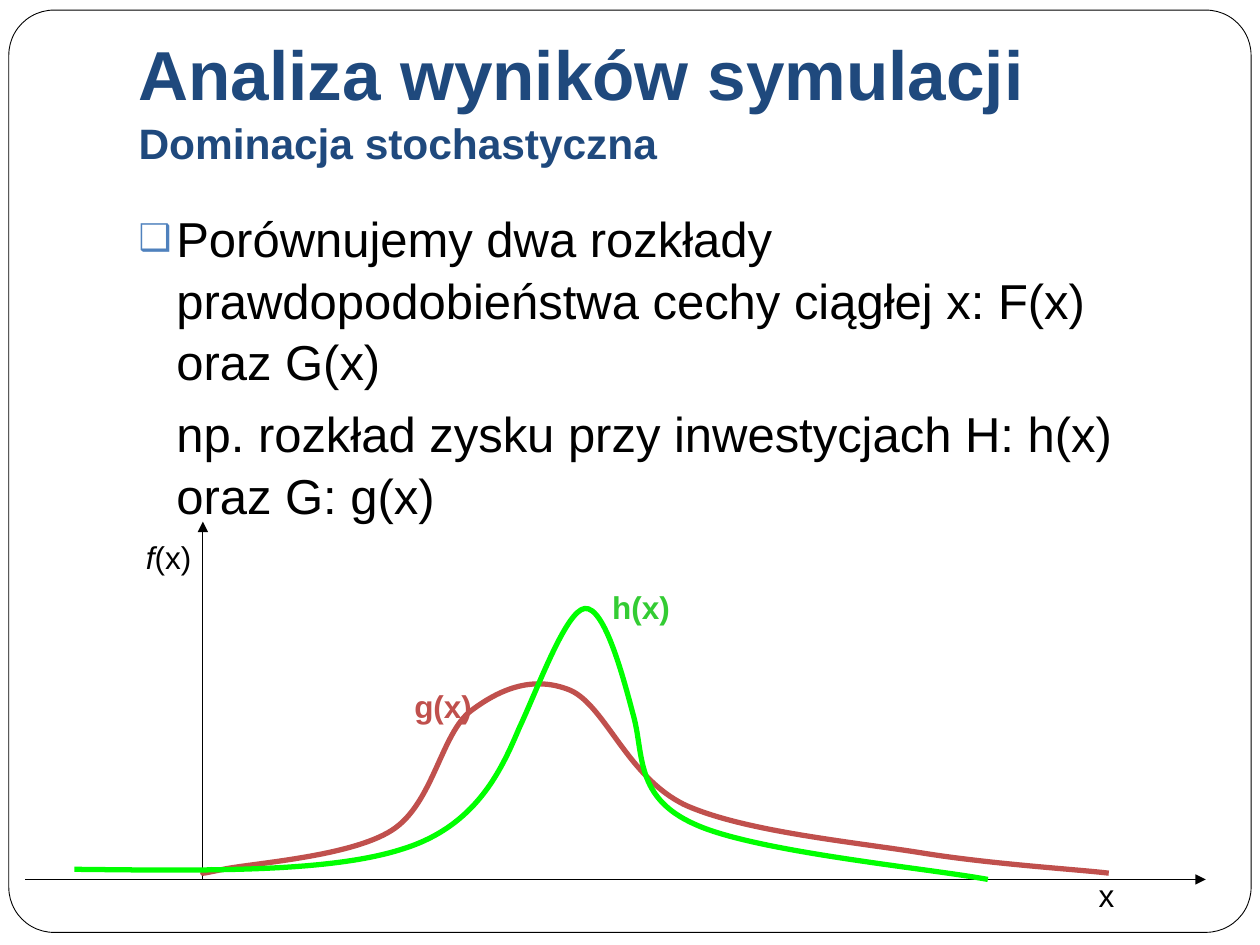
"""Build a slide comparing two probability densities, h(x) and g(x)."""
import pptx
import pptx.dml.color
import pptx.enum.shapes
import pptx.enum.text
import pptx.oxml
import pptx.oxml.ns
import pptx.util

Inches = pptx.util.Inches
Pt = pptx.util.Pt
RGBColor = pptx.dml.color.RGBColor
qn = pptx.oxml.ns.qn

WHITE = RGBColor(0xFF, 0xFF, 0xFF)
BLACK = RGBColor(0x00, 0x00, 0x00)
NAVY = RGBColor(0x1F, 0x49, 0x7D)
BLUE = RGBColor(0x4F, 0x81, 0xBD)
RED = RGBColor(0xC0, 0x50, 0x4D)
LIME = RGBColor(0x00, 0xFF, 0x00)
GREEN = RGBColor(0x33, 0xCC, 0x33)

G_CURVE = [
    (1.69, 6.9), (1.61, 6.93), (1.53, 6.95), (1.77, 6.9),
    (2.01, 6.85), (2.78, 6.8), (3.11, 6.59),
    (3.44, 6.38), (3.5, 5.82), (3.74, 5.64),
    (3.98, 5.46), (4.24, 5.36), (4.53, 5.48),
    (4.81, 5.61), (4.98, 6.17), (5.44, 6.39),
    (5.91, 6.6), (6.76, 6.68), (7.32, 6.77),
    (7.88, 6.86), (8.55, 6.9), (8.8, 6.93),
]
H_CURVE = [
    (0.59, 6.9), (1.58, 6.91), (2.6, 6.93), (3.19, 6.74),
    (3.78, 6.56), (3.98, 6.11), (4.12, 5.78),
    (4.27, 5.46), (4.49, 4.85), (4.64, 4.83),
    (4.8, 4.81), (4.95, 5.39), (5.03, 5.69),
    (5.11, 5.99), (5.04, 6.33), (5.51, 6.54),
    (5.98, 6.76), (7.35, 6.89), (7.84, 6.98),
]


class SlideBuilder:
    def __init__(self, slide, font="Arial"):
        self.slide = slide
        self.font = font

    def style(self, font, size, color, bold=False):
        font.name = self.font
        font.size = Pt(size)
        font.bold = bold
        font.color.rgb = color

    def place(self, shape, left, top, width, height):
        shape.left, shape.top = Inches(left), Inches(top)
        shape.width, shape.height = Inches(width), Inches(height)

    def frame(self, left, top, width, height):
        shape = self.slide.shapes.add_shape(
            pptx.enum.shapes.MSO_SHAPE.ROUNDED_RECTANGLE,
            Inches(left), Inches(top), Inches(width), Inches(height))
        shape.adjustments[0] = 0.049
        shape.shadow.inherit = False
        shape.fill.solid()
        shape.fill.fore_color.rgb = WHITE
        shape.line.color.rgb = BLACK
        shape.line.width = Pt(0.5)
        self.slide.shapes._spTree.insert(2, shape._element)

    def title(self, heading, subheading):
        shape = self.slide.shapes.title
        self.place(shape, 1, 0.3, 8.5, 1.13)
        text_frame = shape.text_frame
        text_frame.auto_size = pptx.enum.text.MSO_AUTO_SIZE.NONE
        text_frame.vertical_anchor = pptx.enum.text.MSO_ANCHOR.BOTTOM
        text_frame.margin_bottom = Inches(0.1)
        paragraph = text_frame.paragraphs[0]
        paragraph.alignment = pptx.enum.text.PP_ALIGN.LEFT
        paragraph.line_spacing = 1.05
        run = paragraph.add_run()
        run.text = heading
        self.style(run.font, 39.6, NAVY, True)
        paragraph.add_line_break()
        run = paragraph.add_run()
        run.text = subheading
        self.style(run.font, 24.3, NAVY, True)

    def body(self, bulleted, continued):
        shape = self.slide.placeholders[1]
        self.place(shape, 1, 1.58, 8.5, 5)
        text_frame = shape.text_frame
        text_frame.auto_size = pptx.enum.text.MSO_AUTO_SIZE.NONE
        text_frame.text = f"{bulleted}\n{continued}"
        bullet = (("a:buClr", None), ("a:buSzPct", {"val": "75000"}),
                  ("a:buFont", {"typeface": self.font}),
                  ("a:buChar", {"char": "❑"}))
        plain = (("a:buNone", {}),)
        for paragraph, marks, indent in zip(
                text_frame.paragraphs, (bullet, plain), (-0.3, 0)):
            paragraph.space_before = Pt(5.8)
            paragraph.line_spacing = 1.05
            self.style(paragraph.font, 28, BLACK)
            properties = paragraph._p.get_or_add_pPr()
            properties.set("marL", str(Inches(0.3)))
            properties.set("indent", str(Inches(indent)))
            position = properties.index(properties.find(qn("a:defRPr")))
            for offset, (tag, attributes) in enumerate(marks):
                mark = properties.makeelement(qn(tag), attributes or {})
                if tag == "a:buClr":
                    mark.append(mark.makeelement(
                        qn("a:srgbClr"), {"val": str(BLUE)}))
                properties.insert(position + offset, mark)

    def axis(self, start, end):
        connector = self.slide.shapes.add_connector(
            pptx.enum.shapes.MSO_CONNECTOR.STRAIGHT,
            *(Inches(value) for value in start + end))
        connector.line.color.rgb = BLACK
        connector.line.width = Pt(0.75)
        line = connector.line._get_or_add_ln()
        line.append(line.makeelement(qn("a:tailEnd"), {"type": "triangle"}))
        properties = connector._element.spPr
        properties.append(properties.makeelement(qn("a:effectLst"), {}))

    def curve(self, points, color):
        points = [(Inches(x), Inches(y)) for x, y in points]
        builder = self.slide.shapes.build_freeform(*points[0])
        builder.add_line_segments(points[1:], close=False)
        shape = builder.convert_to_shape()
        shape.shadow.inherit = False
        shape.fill.background()
        shape.line.color.rgb = color
        shape.line.width = Pt(3)
        segments = list(shape._element.iter(qn("a:lnTo")))
        outline = segments[0].getparent()
        for first in range(0, len(segments), 3):
            bezier = outline.makeelement(qn("a:cubicBezTo"), {})
            outline.append(bezier)
            for segment in segments[first:first + 3]:
                bezier.append(segment[0])
                outline.remove(segment)

    def label(self, left, top, width, text, color=BLACK, bold=False, italic=""):
        shape = self.slide.shapes.add_textbox(
            Inches(left), Inches(top), Inches(width), Inches(0.4))
        shape.text_frame.word_wrap = True
        paragraph = shape.text_frame.paragraphs[0]
        self.style(paragraph.font, 18, color, bold)
        for part, slanted in ((italic, True), (text, False)):
            if part:
                run = paragraph.add_run()
                run.text = part
                self.style(run.font, 18, color, bold)
                run.font.italic = slanted


def main():
    presentation = pptx.Presentation()
    presentation.slide_width = Inches(10)
    presentation.slide_height = Inches(7.5)
    slide = presentation.slides.add_slide(presentation.slide_layouts[1])
    builder = SlideBuilder(slide)
    builder.frame(0.07, 0.08, 9.86, 7.32)
    builder.title("Analiza wyników symulacji", "Dominacja stochastyczna")
    builder.body(
        "Porównujemy dwa rozkłady prawdopodobieństwa cechy ciągłej x: "
        "F(x) oraz G(x)",
        "np. rozkład zysku przy inwestycjach H: h(x) oraz G: g(x)")
    builder.axis((1.61, 6.98), (1.61, 4.14))
    builder.axis((0.2, 6.98), (9.57, 6.98))
    builder.curve(G_CURVE, RED)
    builder.curve(H_CURVE, LIME)
    builder.label(4.76, 4.62, 1.26, "h(x)", GREEN, bold=True)
    builder.label(3.19, 5.4, 1.26, "g(x)", RED, bold=True)
    builder.label(8.62, 6.9, 0.71, "x")
    builder.label(1.06, 4.22, 1.02, "(x)", italic="f")
    presentation.save("out.pptx")


if __name__ == "__main__":
    main()
